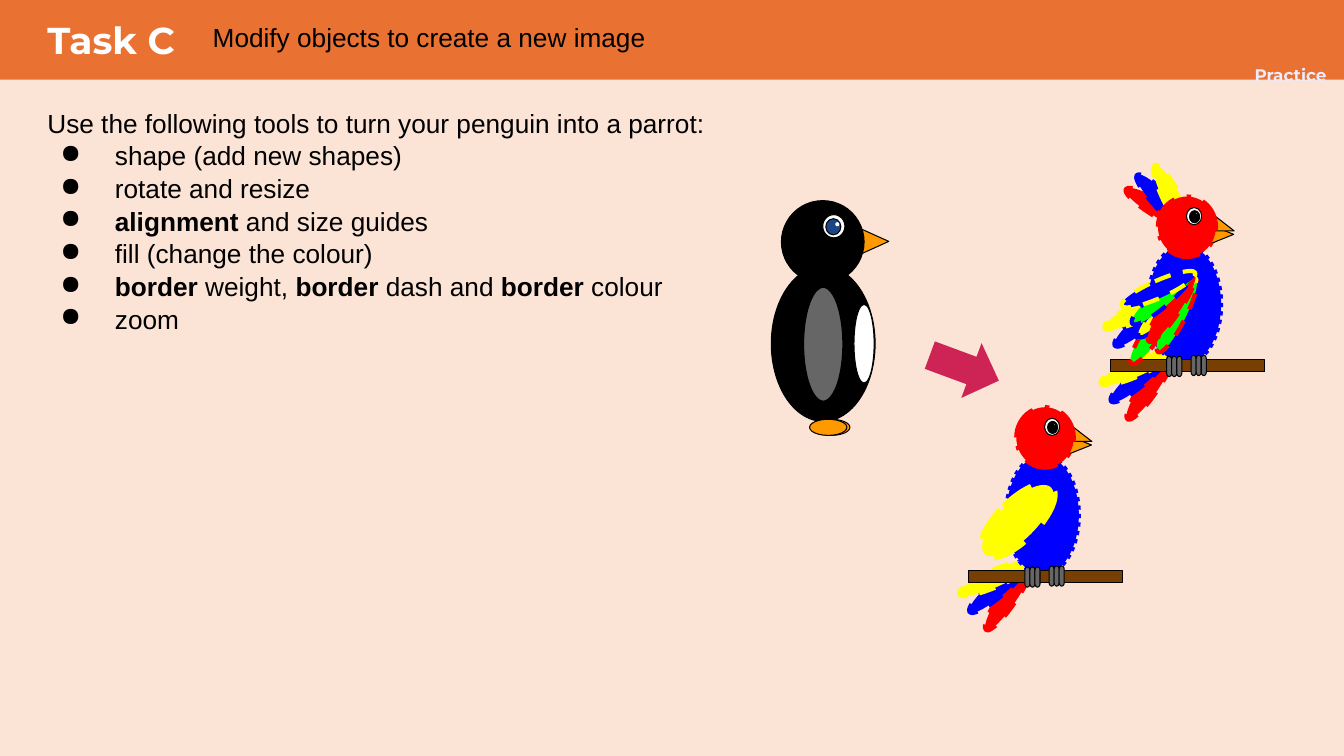
from pptx import Presentation
from pptx.dml.color import RGBColor
from pptx.enum.dml import MSO_LINE as DASH
from pptx.enum.shapes import MSO_SHAPE as SHAPE
from pptx.enum.text import MSO_ANCHOR as ANCHOR, PP_ALIGN as ALIGN
from pptx.oxml.ns import qn
from pptx.util import Inches, Pt
from lxml import etree

PEACH = RGBColor(0xFB, 0xE3, 0xD6)
ORANGE = RGBColor(0xE9, 0x71, 0x32)
LAVENDER = RGBColor(0xEB, 0xED, 0xFE)
WHITE = RGBColor(0xFF, 0xFF, 0xFF)
BLACK = RGBColor(0, 0, 0)
RED = RGBColor(0xFF, 0, 0)
GREEN = RGBColor(0, 0xFF, 0)
BLUE = RGBColor(0, 0, 0xFF)
YELLOW = RGBColor(0xFF, 0xFF, 0)
AMBER = RGBColor(0xFF, 0x99, 0)
GREY = RGBColor(0x66, 0x66, 0x66)
BROWN = RGBColor(0x78, 0x3F, 0x04)
NAVY = RGBColor(0x1C, 0x45, 0x87)
CRIMSON = RGBColor(0xCD, 0x23, 0x55)

LABEL = {"name": "Montserrat", "size": Pt(12), "bold": True}
TASK = {"name": "Montserrat", "size": Pt(26.7), "bold": True}
BODY = {"name": "Arial", "size": Pt(18.7), "bold": False}

TOOLS = [
    [("shape (add new shapes)", False)],
    [("rotate and resize", False)],
    [("alignment", True), (" and size guides", False)],
    [("fill (change the colour)", False)],
    [("border", True), (" weight, ", False), ("border", True),
     (" dash and ", False), ("border", True), (" colour", False)],
    [("zoom", False)],
]

# Feathers: left, top, length, rotation, fill, line
TAIL = [
    (0.31, 1.47, 0.81, 33.8, RED, RED),
    (0.22, 1.38, 0.79, 49.1, BLUE, BLUE),
    (0.18, 1.3, 0.79, 66, YELLOW, YELLOW),
]
CREST = [
    (0.41, -0.27, 0.8, 120.5, RED, RED),
    (0.46, -0.33, 0.82, 135.9, BLUE, BLUE),
    (0.54, -0.36, 0.82, 152.7, YELLOW, YELLOW),
]
WING = [
    (0.35, 0.91, 0.82, 33.8, GREEN, RED),
    (0.26, 0.82, 0.8, 49.1, BLUE, BLUE),
    (0.22, 0.74, 0.8, 66, YELLOW, YELLOW),
    (0.57, 0.77, 0.82, 26.9, GREEN, RED),
    (0.47, 0.68, 0.82, 42.3, YELLOW, BLUE),
    (0.42, 0.62, 0.8, 59.2, YELLOW, YELLOW),
    (0.52, 0.69, 0.82, 33.8, RED, RED),
    (0.43, 0.6, 0.8, 49.1, GREEN, BLUE),
    (0.39, 0.52, 0.8, 66, BLUE, YELLOW),
]


def add_part(shapes, kind, box, fill, line=BLACK, weight=0.75, dash=None,
             rotation=0, adjust=None):
    part = shapes.add_shape(kind, *map(Inches, box))
    part.shadow.inherit = False
    part.rotation = rotation
    part.fill.solid()
    part.fill.fore_color.rgb = fill
    if adjust is not None:
        part.adjustments[0] = adjust
    if line is None:
        part.line.fill.background()
        return
    part.line.color.rgb = line
    part.line.width = Pt(weight)
    if dash:
        part.line.dash_style = dash


def add_run(paragraph, text, color, font_format):
    run = paragraph.add_run()
    run.text = text
    for key, value in font_format.items():
        setattr(run.font, key, value)
    run.font.color.rgb = color


def add_frame(slide, box, anchor=ANCHOR.TOP):
    frame = slide.shapes.add_textbox(*map(Inches, box)).text_frame
    settings = {"word_wrap": True, "vertical_anchor": anchor, "margin_left": 0,
                "margin_right": 0, "margin_top": 0, "margin_bottom": 0}
    for key, value in settings.items():
        setattr(frame, key, value)
    return frame


def add_bullet(paragraph):
    props = paragraph._p.get_or_add_pPr()
    props.set("marL", str(Inches(0.67)))
    props.set("indent", str(Inches(-0.54)))
    color = etree.SubElement(props, qn("a:buClr"))
    etree.SubElement(color, qn("a:srgbClr")).set("val", str(BLACK))
    etree.SubElement(props, qn("a:buChar")).set("char", "●")


def add_header(slide, left, top, width, height):
    add_part(slide.shapes, SHAPE.RECTANGLE, (left, top, width, height), ORANGE, None)
    practice = add_frame(slide, (left + width - 0.97, top + 0.64, 0.88, 0.2))
    practice.paragraphs[0].alignment = ALIGN.CENTER
    add_run(practice.paragraphs[0], "Practice", LAVENDER, LABEL)
    task = add_frame(slide, (left + 0.47, top + 0.06, 1.92, 0.56), ANCHOR.BOTTOM)
    add_run(task.paragraphs[0], "Task C", WHITE, TASK)
    title = add_frame(slide, (left + 2.11, top + 0.21, 8.37, 0.4))
    add_run(title.paragraphs[0], "Modify objects to create a new image", BLACK, BODY)


def add_instructions(slide, box):
    frame = add_frame(slide, box)
    intro = frame.paragraphs[0]
    intro.line_spacing = 1.04
    add_run(intro, "Use the following tools to turn your penguin into a parrot:",
            BLACK, BODY)
    for tool in TOOLS:
        paragraph = frame.add_paragraph()
        paragraph.line_spacing = 1.04
        add_bullet(paragraph)
        for text, bold in tool:
            add_run(paragraph, text, BLACK, BODY | {"bold": bold})


def add_penguin(slide, left, top):
    shapes = slide.shapes.add_group_shape().shapes

    def oval(x, y, w, h, fill, **style):
        add_part(shapes, SHAPE.OVAL, (left + x, top + y, w, h), fill, **style)

    oval(0, 0.65, 1.03, 1.54, BLACK)  # body
    add_part(shapes, SHAPE.ISOSCELES_TRIANGLE, (left + 0.87, top + 0.25, 0.28, 0.31),
             AMBER, rotation=90)  # beak
    oval(0.1, 0, 0.82, 0.82, BLACK)  # head
    oval(0.31, 0.85, 0.41, 1.15, GREY, weight=2.25)  # wing
    oval(0.51, 0.14, 0.22, 0.23, WHITE)  # eye
    oval(0.54, 0.18, 0.15, 0.16, NAVY)
    oval(0.64, 0.22, 0.03, 0.03, WHITE, line=WHITE)
    oval(0.82, 1.03, 0.2, 0.78, WHITE)  # belly
    for foot_left in (0.41, 0.38):
        oval(foot_left, 2.17, 0.37, 0.16, AMBER)


def add_parrot(slide, left, top, stretch=1, crest=(), wing=()):
    shapes = slide.shapes.add_group_shape().shapes

    def part(kind, x, y, w, h, fill, **style):
        box = (left + x * stretch, top + y, w * stretch, h)
        add_part(shapes, kind, box, fill, **style)

    def feathers(fan):
        for x, y, length, rotation, fill, line in fan:
            part(SHAPE.OVAL, x, y, 0.17, length, fill, line=line, weight=3,
                 dash=DASH.DASH, rotation=rotation)

    feathers(crest)
    feathers(TAIL)
    # Body, beak and perch
    part(SHAPE.OVAL, 0.37, 0.48, 0.72, 1.18, BLUE, line=BLUE, weight=3,
         dash=DASH.ROUND_DOT)
    part(SHAPE.ISOSCELES_TRIANGLE, 0.99, 0.25, 0.2, 0.25, AMBER, rotation=90)
    part(SHAPE.RECTANGLE, 0, 1.62, 1.52, 0.12, BROWN)
    part(SHAPE.ISOSCELES_TRIANGLE, 0.99, 0.11, 0.2, 0.26, AMBER, rotation=90, adjust=1)
    # Claws
    for foot_left, foot_top in ((0.72, 1.65), (0.48, 1.66)):
        for toe in range(3):
            part(SHAPE.FLOWCHART_TERMINATOR, foot_left + 0.05 * toe, foot_top,
                 0.2, 0.05, GREY, rotation=90)
    # Head, eye and wing
    part(SHAPE.OVAL, 0.47, 0, 0.57, 0.6, RED, line=RED, weight=3,
         dash=DASH.LONG_DASH_DOT)
    part(SHAPE.OVAL, 0.75, 0.11, 0.15, 0.17, WHITE)
    part(SHAPE.OVAL, 0.78, 0.14, 0.1, 0.12, BLACK)
    part(SHAPE.OVAL, 0.84, 0.16, 0.02, 0.02, WHITE)
    if wing:
        feathers(wing)
    else:
        part(SHAPE.OVAL, 0.3, 0.66, 0.37, 0.93, YELLOW, line=YELLOW, weight=6,
             dash=DASH.DASH, rotation=45)


def main():
    prs = Presentation()
    prs.slide_width, prs.slide_height = Inches(13.33), Inches(7.5)
    slide = prs.slides.add_slide(prs.slide_layouts[6])
    slide.background.fill.solid()
    slide.background.fill.fore_color.rgb = PEACH
    add_header(slide, 0, 0, 13.33, 0.79)
    add_instructions(slide, (0.47, 1.05, 9.17, 2.2))
    add_parrot(slide, 9.61, 4.04)
    add_part(slide.shapes, SHAPE.RIGHT_ARROW, (9.2, 3.36, 0.73, 0.58), CRIMSON,
             None, rotation=20.3)
    add_penguin(slide, 7.65, 1.99)
    add_parrot(slide, 11.01, 1.95, stretch=1.01, crest=CREST, wing=WING)
    prs.save("out.pptx")


if __name__ == "__main__":
    main()
